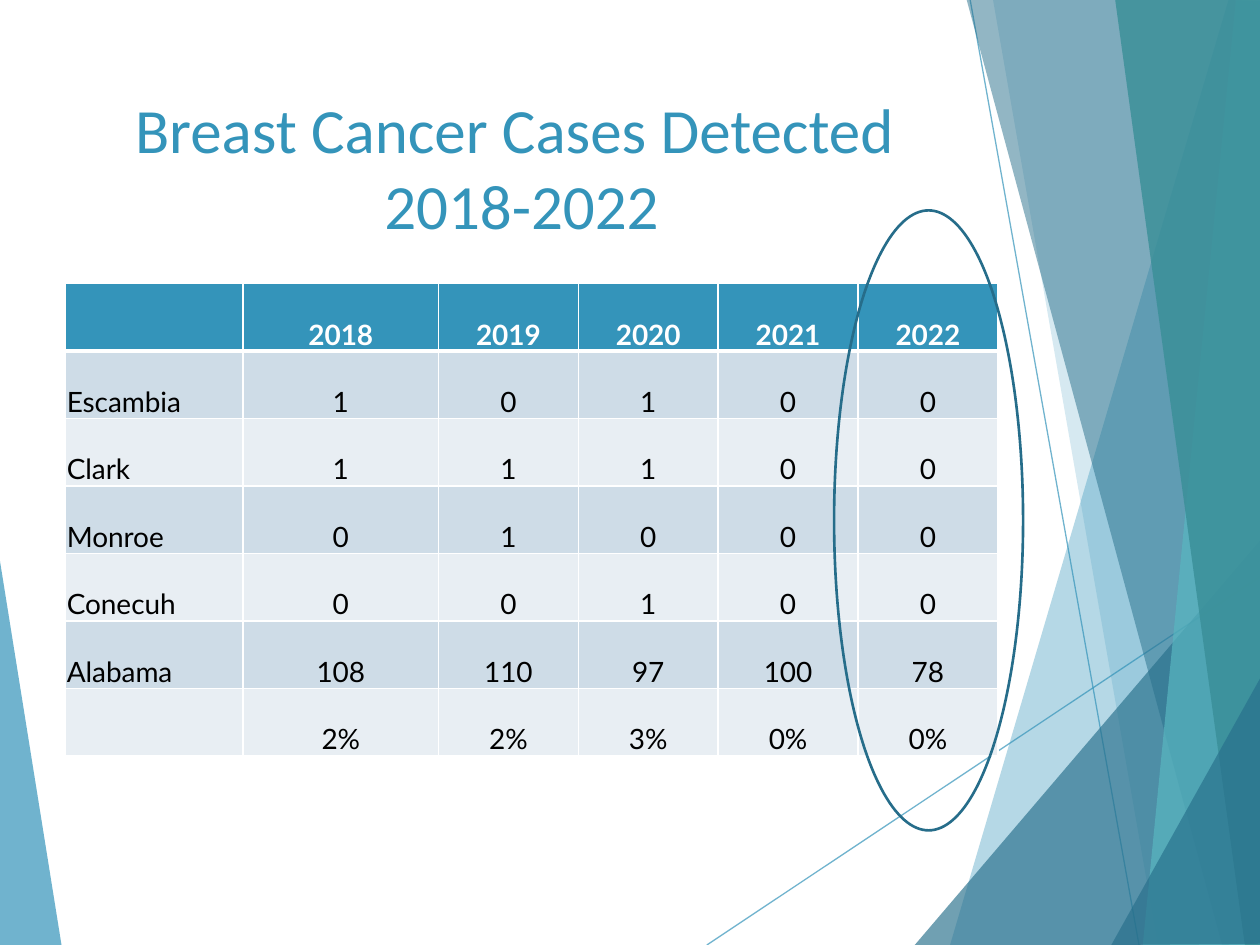
from dataclasses import dataclass

from lxml.etree import SubElement
from pptx import Presentation
from pptx.dml.color import RGBColor
from pptx.enum.shapes import MSO_CONNECTOR, MSO_SHAPE
from pptx.enum.text import MSO_ANCHOR, PP_ALIGN
from pptx.oxml import parse_xml
from pptx.oxml.ns import nsdecls, qn
from pptx.slide import Slide
from pptx.table import _Cell
from pptx.util import Inches, Pt


@dataclass(frozen=True)
class Theme:
    blue: str = "3494BA"
    dark_blue: str = "276F8B"
    turquoise: str = "58B6C0"
    teal: str = "3A8F98"
    outline: str = "266D8A"
    white: str = "FFFFFF"
    black: str = "000000"
    bands: tuple[str, str] = ("CEDCE7", "E8EEF3")
    title_font: str = "Calibri"
    table_font: str = "Lato"
    title_size: int = 36
    table_size: int = 16


@dataclass(frozen=True)
class Facet:
    points: tuple[tuple[float, float], ...]
    color: str
    opacity: int


@dataclass(frozen=True)
class Ray:
    start: tuple[float, float]
    end: tuple[float, float]


THEME = Theme()

LEFT_FACET = Facet(((-0.01, 4.39), (0.49, 7.51), (-0.01, 7.5)), THEME.blue, 70)
RAYS = (Ray((5.61, 7.5), (10.01, 4.57)), Ray((7.7, 0), (9.04, 7.5)))
RIGHT_FACETS = (
    Facet(((9.75, 0), (7.54, 7.5), (10.02, 7.51), (10.01, 0.01)), THEME.blue, 36),
    Facet(((7.88, -0.01), (9.19, 7.5), (10.01, 7.5), (10.01, -0.01)), THEME.blue, 20),
    Facet(((7.26, 7.5), (10, 4.29), (10.01, 7.5)), THEME.dark_blue, 66),
    Facet(((7.67, -0.01), (9.7, 7.5), (10.01, 7.49), (10.01, -0.01)), THEME.dark_blue, 50),
    Facet(((9.81, -0.01), (9.07, 7.5), (10.01, 7.5), (10, -0.01)), THEME.turquoise, 70),
    Facet(((8.85, -0.01), (9.88, 7.5), (10.02, 7.5), (10, -0.01)), THEME.teal, 82),
    Facet(((8.82, 7.5), (10.02, 5.35), (10.02, 7.49)), THEME.dark_blue, 66),
)

COLUMN_WIDTHS = (1.41, 1.55, 1.11, 1.11, 1.11, 1.11)
CASES = (
    ("", "2018", "2019", "2020", "2021", "2022"),
    ("Escambia", "1", "0", "1", "0", "0"),
    ("Clark", "1", "1", "1", "0", "0"),
    ("Monroe", "0", "1", "0", "0", "0"),
    ("Conecuh", "0", "0", "1", "0", "0"),
    ("Alabama", "108", "110", "97", "100", "78"),
    ("", "2%", "2%", "3%", "0%", "0%"),
)


def set_opacity(fill_parent, opacity: int) -> None:
    color = fill_parent.find(f"{qn('a:solidFill')}/{qn('a:srgbClr')}")
    SubElement(color, qn("a:alpha"), val=str(opacity * 1000))


def draw_facet(slide: Slide, facet: Facet) -> None:
    points = [(Inches(x), Inches(y)) for x, y in facet.points]
    builder = slide.shapes.build_freeform(*points[0])
    builder.add_line_segments(points[1:], close=True)
    shape = builder.convert_to_shape()
    shape.shadow.inherit = False
    shape.fill.solid()
    shape.fill.fore_color.rgb = RGBColor.from_string(facet.color)
    set_opacity(shape._element.spPr, facet.opacity)
    shape.line.fill.background()


def draw_ray(slide: Slide, ray: Ray) -> None:
    ends = [Inches(value) for value in ray.start + ray.end]
    connector = slide.shapes.add_connector(MSO_CONNECTOR.STRAIGHT, *ends)
    connector.line.color.rgb = RGBColor.from_string(THEME.blue)
    connector.line.width = Pt(0.75)
    properties = connector._element.spPr
    set_opacity(properties.find(qn("a:ln")), 70)
    SubElement(properties, qn("a:effectLst"))


def draw_title(slide: Slide) -> None:
    box = slide.shapes.add_textbox(Inches(0.67), Inches(0.67), Inches(6.94), Inches(1.44))
    text_frame = box.text_frame
    text_frame.word_wrap = True
    text_frame.vertical_anchor = MSO_ANCHOR.TOP
    text_frame.text = "Breast Cancer Cases Detected \v2018-2022"
    paragraph = text_frame.paragraphs[0]
    paragraph.alignment = PP_ALIGN.CENTER
    for run in paragraph.runs:
        run.font.name = THEME.title_font
        run.font.size = Pt(THEME.title_size)
        run.font.color.rgb = RGBColor.from_string(THEME.blue)


def set_borders(cell: _Cell, is_header: bool, below_header: bool) -> None:
    widths = {"L": 1, "R": 1, "T": 3 if below_header else 1, "B": 3 if is_header else 1}
    properties = cell._tc.get_or_add_tcPr()
    for index, (side, width) in enumerate(widths.items()):
        border = parse_xml(
            f'<a:ln{side} {nsdecls("a")} w="{Pt(width)}"><a:solidFill>'
            f'<a:srgbClr val="{THEME.white}"/></a:solidFill></a:ln{side}>'
        )
        properties.insert(index, border)


def fill_cell(cell: _Cell, text: str, row: int, column: int) -> None:
    is_header = row == 0
    cell.fill.solid()
    background = THEME.blue if is_header else THEME.bands[(row - 1) % 2]
    cell.fill.fore_color.rgb = RGBColor.from_string(background)
    set_borders(cell, is_header, row == 1)
    cell.vertical_anchor = MSO_ANCHOR.BOTTOM
    cell.margin_left = cell.margin_right = cell.margin_top = Inches(0.01)
    cell.margin_bottom = 0
    cell.text_frame.text = text
    paragraph = cell.text_frame.paragraphs[0]
    paragraph.alignment = PP_ALIGN.LEFT if column == 0 else PP_ALIGN.CENTER
    for run in paragraph.runs:
        run.font.name = THEME.table_font
        run.font.size = Pt(THEME.table_size)
        run.font.bold = is_header
        run.font.color.rgb = RGBColor.from_string(THEME.white if is_header else THEME.black)


def draw_table(slide: Slide) -> None:
    frame = slide.shapes.add_table(
        len(CASES), len(COLUMN_WIDTHS), Inches(0.52), Inches(2.25), Inches(7.4), Inches(3.75)
    )
    table = frame.table
    for column, width in zip(table.columns, COLUMN_WIDTHS):
        column.width = Inches(width)
    for row, values in enumerate(CASES):
        for column, text in enumerate(values):
            fill_cell(table.cell(row, column), text, row, column)


def draw_highlight(slide: Slide) -> None:
    ellipse = slide.shapes.add_shape(
        MSO_SHAPE.OVAL, Inches(6.62), Inches(1.67), Inches(1.5), Inches(4.92)
    )
    ellipse.shadow.inherit = False
    ellipse.fill.background()
    ellipse.line.color.rgb = RGBColor.from_string(THEME.outline)
    ellipse.line.width = Pt(1.5)


def main() -> None:
    presentation = Presentation()
    presentation.slide_width = Inches(10)
    presentation.slide_height = Inches(7.5)
    slide = presentation.slides.add_slide(presentation.slide_layouts[6])
    draw_facet(slide, LEFT_FACET)
    for ray in RAYS:
        draw_ray(slide, ray)
    for facet in RIGHT_FACETS:
        draw_facet(slide, facet)
    draw_title(slide)
    draw_table(slide)
    draw_highlight(slide)
    presentation.save("out.pptx")


if __name__ == "__main__":
    main()
